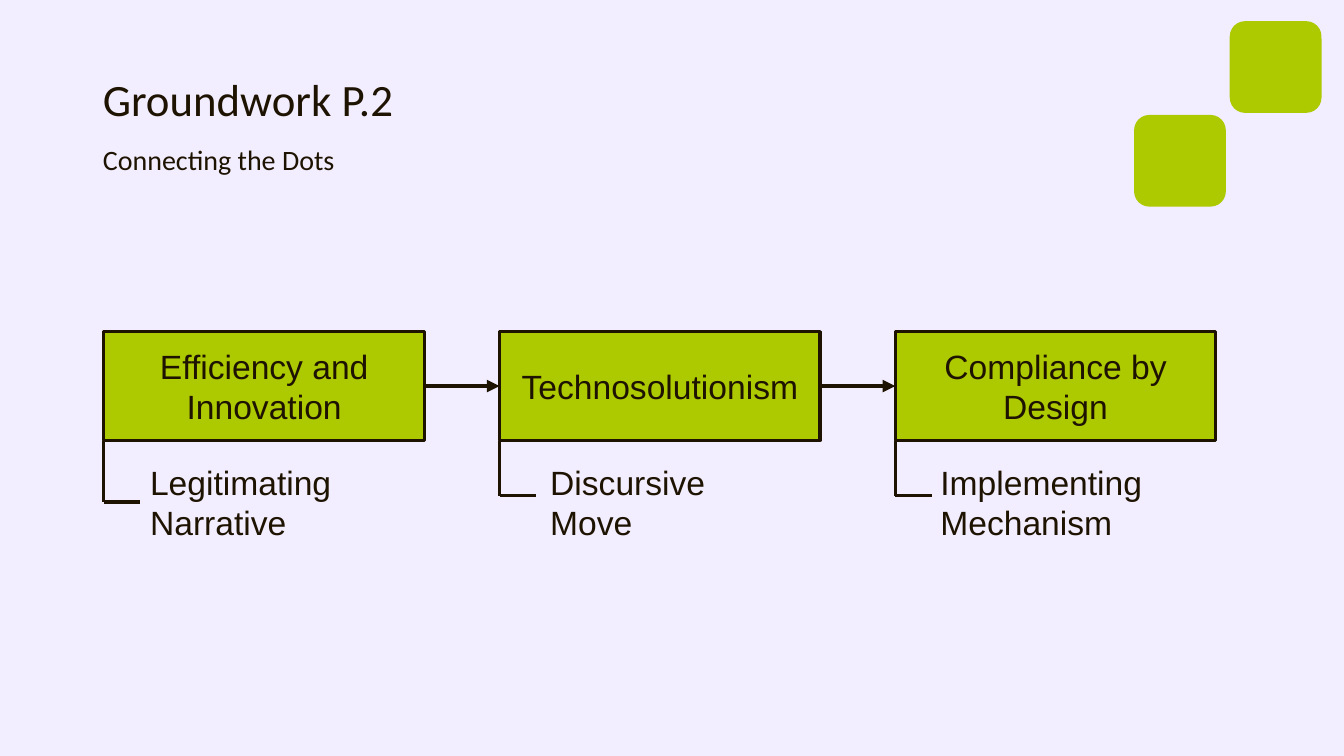
from lxml import etree
from pptx import Presentation
from pptx.dml.color import RGBColor
from pptx.enum.dml import MSO_LINE
from pptx.enum.shapes import MSO_CONNECTOR, MSO_SHAPE
from pptx.enum.text import MSO_ANCHOR, MSO_AUTO_SIZE, PP_ALIGN
from pptx.oxml.ns import qn
from pptx.util import Inches, Pt

STRAIGHT = MSO_CONNECTOR.STRAIGHT
RECTANGLE, ROUNDED = MSO_SHAPE.RECTANGLE, MSO_SHAPE.ROUNDED_RECTANGLE
SOLID = MSO_LINE.SOLID
TOP, MIDDLE = MSO_ANCHOR.TOP, MSO_ANCHOR.MIDDLE
LEFT, CENTER = PP_ALIGN.LEFT, PP_ALIGN.CENTER
GROW, FIXED = MSO_AUTO_SIZE.SHAPE_TO_FIT_TEXT, MSO_AUTO_SIZE.NONE

COLORS = {"background": "F2EEFF", "lime": "ADC900", "ink": "1E1300"}
WIDTH, HEIGHT = Inches(13.333), Inches(7.5)
GRID = 100

STEP_LEFT, STEP_TOP, STEP_PITCH = 7.73, 43.87, 29.44
STEP_WIDTH, STEP_HEIGHT = 23.85, 14.4
BRACKET_REACH = 2.7
CAPTION_TOP, CAPTION_HEIGHT = 60.4, 12.13
TILE_COLUMNS, TILE_ROWS = 6.83, 12.13

STEPS = [
    ("Efficiency and Innovation", "Legitimating Narrative", 2.7, 21.23, 66.4),
    ("Technosolutionism", "Discursive Move", 3.03, 15.45, 65.6),
    ("Compliance by Design", "Implementing Mechanism", 2.62, 20.33, 65.6),
]
TILES = [(91.5, 2.8), (84.38, 15.2)]


def color(key):
    return RGBColor.from_string(COLORS[key])


def col(units):
    return round(WIDTH * units / GRID)


def row(units):
    return round(HEIGHT * units / GRID)


def area(left, top, width, height):
    return col(left), row(top), col(width), row(height)


def add_text(paragraph, text, size, font):
    run = paragraph.add_run()
    run.text = text
    run.font.size = Pt(size)
    run.font.name = font
    run.font.color.rgb = color("ink")


def add_title(slide):
    title = slide.shapes.title
    title.left, title.top, title.width, title.height = area(6.9, 5.33, 75.98, 19.33)
    frame = title.text_frame
    frame.word_wrap = True
    frame.auto_size = FIXED
    frame.vertical_anchor = TOP
    heading = frame.paragraphs[0]
    heading.alignment = LEFT
    heading.line_spacing = 1.5
    heading.space_before = Pt(0)
    add_text(heading, "Groundwork P.2", 32, "Calibri")
    heading.add_line_break()
    add_text(heading, "Connecting the Dots", 20, "Calibri")


def add_block(slide, preset, *place):
    block = slide.shapes.add_shape(preset, *area(*place))
    block.shadow.inherit = False
    block.fill.solid()
    block.fill.fore_color.rgb = color("lime")
    block.line.fill.background()
    return block


def add_step(slide, left, name):
    step = add_block(slide, RECTANGLE, left, STEP_TOP, STEP_WIDTH, STEP_HEIGHT)
    step.line.color.rgb = color("ink")
    step.line.width = Pt(2.25)
    frame = step.text_frame
    frame.word_wrap = True
    frame.vertical_anchor = MIDDLE
    frame.paragraphs[0].alignment = CENTER
    add_text(frame.paragraphs[0], name, 24, "Arial")
    return step


def add_caption(slide, left, width, text):
    caption = slide.shapes.add_textbox(*area(left, CAPTION_TOP, width, CAPTION_HEIGHT))
    frame = caption.text_frame
    frame.word_wrap = True
    frame.auto_size = GROW
    add_text(frame.paragraphs[0], text, 24, "Arial")


def add_line(slide, start, end, weight):
    line = slide.shapes.add_connector(
        STRAIGHT, col(start[0]), row(start[1]), col(end[0]), row(end[1]))
    line.line.color.rgb = color("ink")
    line.line.width = Pt(weight)
    line.line.dash_style = SOLID
    etree.SubElement(line._element.spPr, qn("a:effectLst"))
    return line


def add_bracket(slide, left, bottom):
    corner = (left, bottom)
    add_line(slide, (left, STEP_TOP + STEP_HEIGHT), corner, 2.25)
    add_line(slide, (left + BRACKET_REACH, bottom), corner, 2.25)


def add_arrow(slide, source, target):
    arrow = add_line(slide, (0, 0), (0, 0), 3)
    arrow.begin_connect(source, 3)
    arrow.end_connect(target, 1)
    outline = arrow.line._get_or_add_ln()
    etree.SubElement(outline, qn("a:tailEnd"), type="triangle")


def main():
    deck = Presentation()
    deck.slide_width, deck.slide_height = WIDTH, HEIGHT
    slide = deck.slides.add_slide(deck.slide_layouts[5])
    slide.background.fill.solid()
    slide.background.fill.fore_color.rgb = color("background")

    add_title(slide)
    for left, top in TILES:
        add_block(slide, ROUNDED, left, top, TILE_COLUMNS, TILE_ROWS)

    chain = []
    for index, (name, caption, indent, width, bracket_bottom) in enumerate(STEPS):
        left = STEP_LEFT + index * STEP_PITCH
        chain.append(add_step(slide, left, name))
        add_caption(slide, left + indent, width, caption)
        add_bracket(slide, left, bracket_bottom)
    for source, target in zip(chain, chain[1:]):
        add_arrow(slide, source, target)

    deck.save("out.pptx")


if __name__ == "__main__":
    main()
